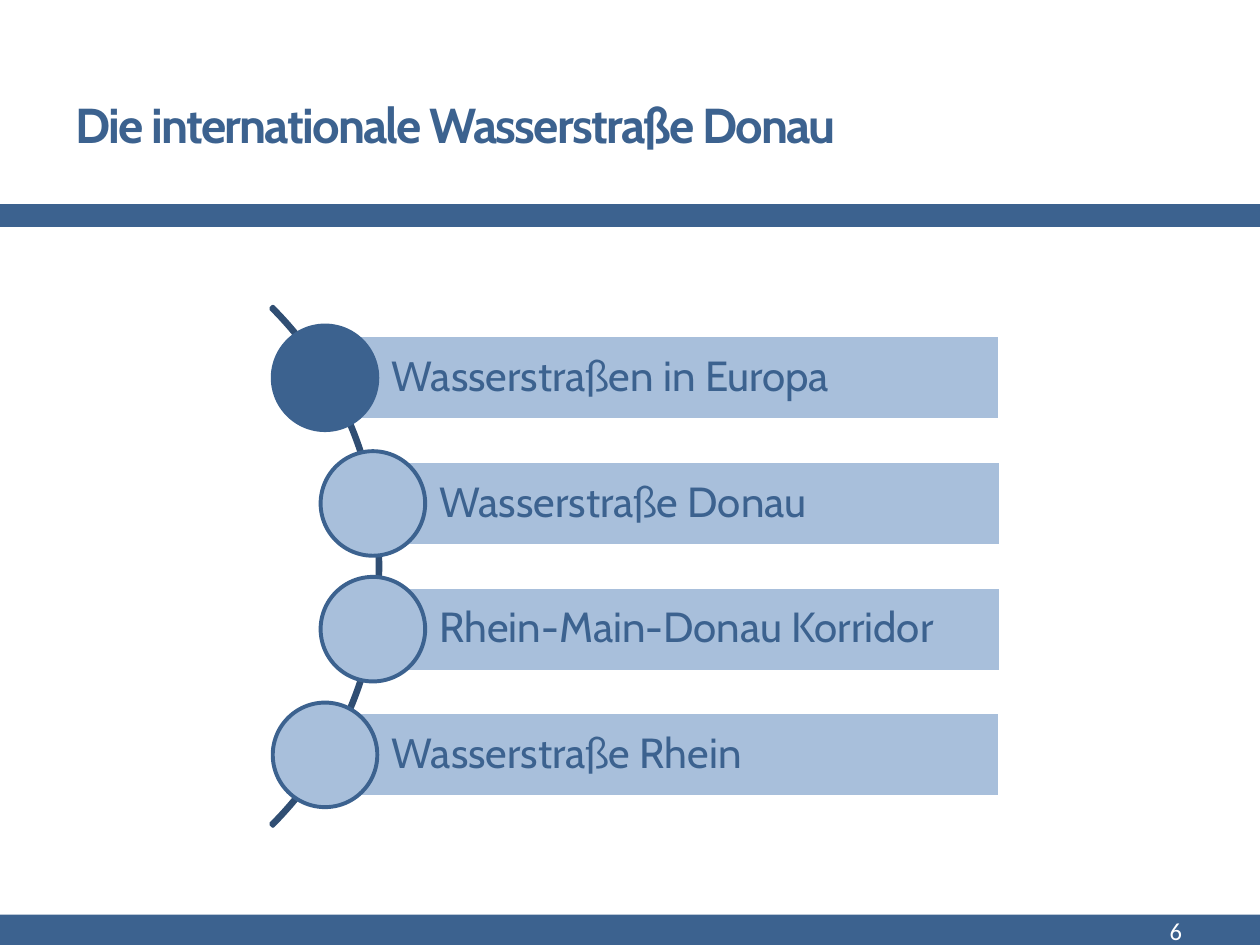
from pptx import Presentation
from pptx.dml.color import RGBColor
from pptx.enum.shapes import MSO_SHAPE
from pptx.enum.text import MSO_ANCHOR, PP_ALIGN
from pptx.util import Inches, Pt

NAVY = RGBColor(0x3C, 0x62, 0x8F)
DARK_NAVY = RGBColor(0x30, 0x4E, 0x73)
LIGHT_BLUE = RGBColor(0xA8, 0xBF, 0xDB)
WHITE = RGBColor(0xFF, 0xFF, 0xFF)

TOPICS = [
    "Wasserstraßen in Europa",
    "Wasserstraße Donau",
    "Rhein-Main-Donau Korridor",
    "Wasserstraße Rhein",
]
CURRENT_TOPIC = 0


def add_filled_shape(slide, kind, box, fill=None, line=None, line_width=2.08):
    """Add a preset shape to box, with optional fill and outline."""
    shape = slide.shapes.add_shape(kind, *map(Inches, box))
    shape.shadow.inherit = False
    if fill is None:
        shape.fill.background()
    else:
        shape.fill.solid()
        shape.fill.fore_color.rgb = fill
    if line is None:
        shape.line.fill.background()
    else:
        shape.line.color.rgb = line
        shape.line.width = Pt(line_width)
    return shape


def set_text(shape, text, size, color, font="Cabin", align=PP_ALIGN.LEFT):
    """Write one vertically centred line and return its run."""
    frame = shape.text_frame
    frame.word_wrap = True
    frame.vertical_anchor = MSO_ANCHOR.MIDDLE
    frame.text = text
    paragraph = frame.paragraphs[0]
    paragraph.alignment = align
    run = paragraph.runs[0]
    run.font.name = font
    run.font.size = Pt(size)
    run.font.color.rgb = color
    return run


def add_header(slide, left, top, width):
    """Add the slide title and the bar beneath it."""
    add_filled_shape(slide, MSO_SHAPE.RECTANGLE, (left, top + 1.18, width + 0.12, 0.18), NAVY)
    box = map(Inches, (left + 0.5, top, width - 1, 1.08))
    title = slide.shapes.add_textbox(*box)
    run = set_text(title, "Die internationale Wasserstraße Donau", 28, NAVY)
    run.font.bold = True
    run.font._element.set("spc", "-100")


def add_footer(slide, left, top, width):
    """Add the bottom bar and the slide number."""
    add_filled_shape(slide, MSO_SHAPE.RECTANGLE, (left - 0.04, top, width + 0.16, 0.5), NAVY)
    box = map(Inches, (left + 8.31, top - 0.05, 1.17, 0.36))
    number = slide.shapes.add_textbox(*box)
    set_text(number, "6", 14, WHITE, "Calibri", PP_ALIGN.RIGHT)


def add_topic(slide, left, center_y, right, text, is_current):
    """Add a topic bar with a circle centred on its left edge."""
    bar_height, diameter = 0.67, 0.83
    bar_box = (left, center_y - bar_height / 2, right - left, bar_height)
    bar = add_filled_shape(slide, MSO_SHAPE.RECTANGLE, bar_box, LIGHT_BLUE, WHITE)
    set_text(bar, text, 24, NAVY)
    frame = bar.text_frame
    frame.margin_left = Inches(0.53)
    frame.margin_right = frame.margin_top = frame.margin_bottom = Inches(0.07)
    frame.paragraphs[0].line_spacing = 0.9
    circle_box = (left - diameter / 2, center_y - diameter / 2, diameter, diameter)
    fill = NAVY if is_current else LIGHT_BLUE
    add_filled_shape(slide, MSO_SHAPE.OVAL, circle_box, fill, NAVY, 2.25)


def add_topic_list(slide, left, top, width, height):
    """Add the topics along an arc that bulges to the right."""
    diameter = 5.83
    arc_box = (left - 4.97, top + (height - diameter) / 2, diameter, diameter)
    arc = add_filled_shape(slide, MSO_SHAPE.BLOCK_ARC, arc_box, line=DARK_NAVY)
    for index, value in enumerate((189, 27, 0.004)):
        arc.adjustments[index] = value
    pitch = height / len(TOPICS)
    for index, text in enumerate(TOPICS):
        is_outer = index in (0, len(TOPICS) - 1)
        bar_left = left + (0.42 if is_outer else 0.8)
        center_y = top + (index + 0.5) * pitch
        add_topic(slide, bar_left, center_y, left + width, text, index == CURRENT_TOPIC)


def main():
    """Build and save the slide."""
    presentation = Presentation()
    presentation.slide_width = Inches(10)
    presentation.slide_height = Inches(7.5)
    slide = presentation.slides.add_slide(presentation.slide_layouts[6])
    add_header(slide, 0, 0.44, 10)
    add_topic_list(slide, 2.16, 2.5, 5.78, 3.99)
    add_footer(slide, 0, 7.26, 10)
    presentation.save("out.pptx")


if __name__ == "__main__":
    main()
